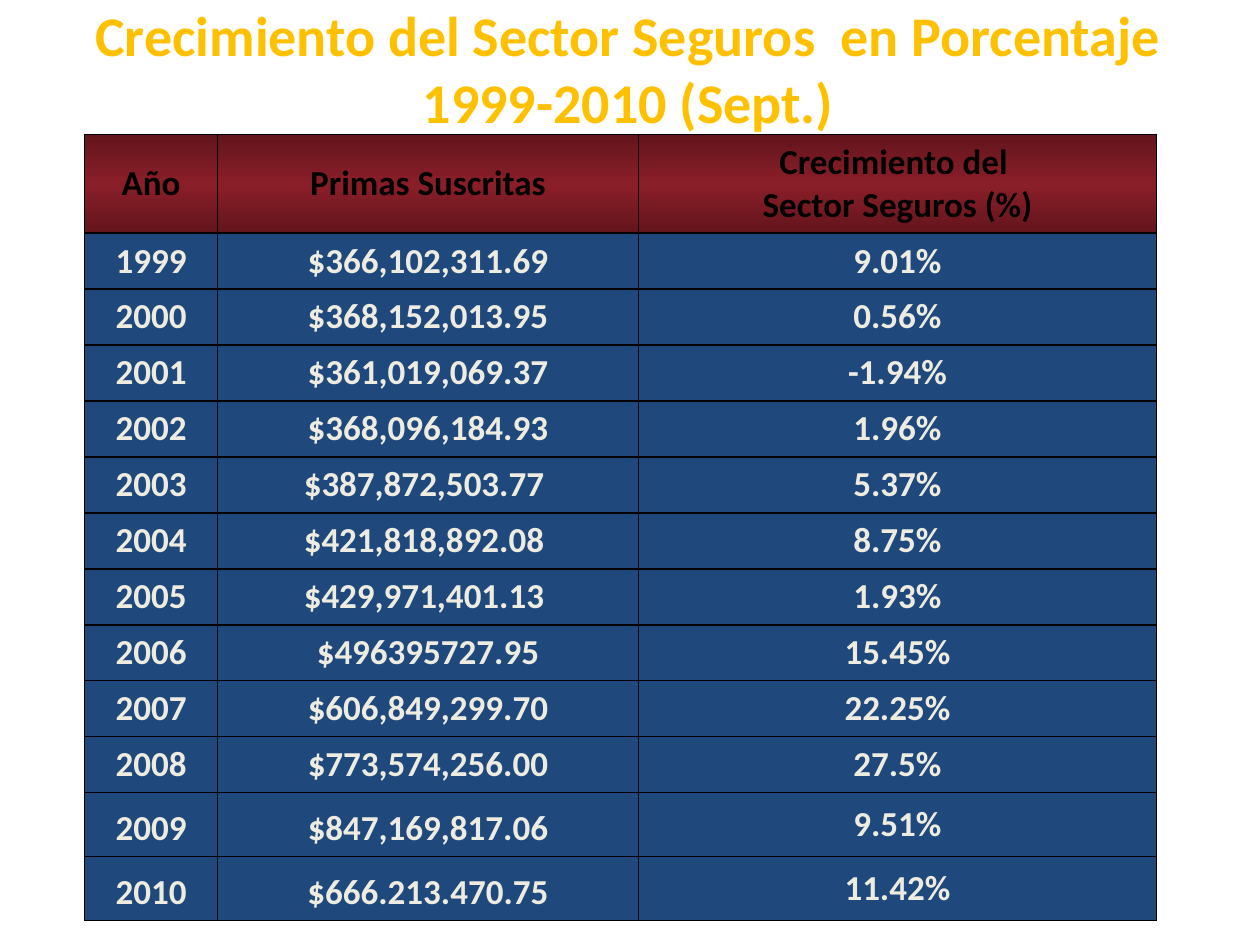
from dataclasses import dataclass

from lxml.etree import SubElement
from pptx import Presentation
from pptx.dml.color import RGBColor
from pptx.enum.text import MSO_ANCHOR as Anchor, MSO_AUTO_SIZE as AutoSize, PP_ALIGN as Align
from pptx.oxml import parse_xml
from pptx.oxml.ns import nsdecls, qn
from pptx.util import Pt


@dataclass(frozen=True)
class Theme:
    font: str = "Calibri"
    title_size: int = 32
    table_size: int = 20
    title: str = "FFC000"
    header_text: str = "000000"
    body_text: str = "EEECE1"
    body_fill: str = "1F497D"
    header_edge: str = "63151D"
    header_middle: str = "8A1E28"
    line: str = "000000"


THEME = Theme()
HANGING = Pt(27)
COLUMN_WIDTHS = (76, 240.5, 296)
HEADER_HEIGHT, ROW_HEIGHT, LAST_ROW_HEIGHT = 56.2, 32, 36.6

TITLE = ("Crecimiento del Sector Seguros  en Porcentaje", "1999-2010 (Sept.)")
HEADERS = ("Año", "Primas Suscritas", "Crecimiento del \nSector Seguros (%)")
GROWTH = (
    ("1999", " $366,102,311.69 ", "9.01%"),
    ("2000", " $368,152,013.95 ", "0.56%"),
    ("2001", " $361,019,069.37 ", "-1.94%"),
    ("2002", " $368,096,184.93 ", "1.96%"),
    ("2003", "$387,872,503.77 ", "5.37%"),
    ("2004", "$421,818,892.08 ", "8.75%"),
    ("2005", "$429,971,401.13 ", "1.93%"),
    ("2006", "$496395727.95", "15.45%"),
    ("2007", "$606,849,299.70", "22.25%"),
    ("2008", "$773,574,256.00", "27.5%"),
    ("2009", "$847,169,817.06", "9.51%"),
    ("2010", "$666.213.470.75", "11.42%"),
)
BOTTOM_YEARS = ("2009", "2010")


def add_run(paragraph, text, size, color):
    run = paragraph.add_run()
    run.text = text
    run.font.name = THEME.font
    run.font.size = Pt(size)
    run.font.bold = True
    run.font.color.rgb = RGBColor.from_string(color)
    return run


def line_xml(tag, width):
    return parse_xml(
        f'<a:{tag} {nsdecls("a")} w="{Pt(width)}"><a:solidFill>'
        f'<a:srgbClr val="{THEME.line}"/></a:solidFill></a:{tag}>')


def add_title(slide):
    title = slide.shapes.title
    title.left, title.top, title.width, title.height = Pt(31), Pt(0), Pt(656), Pt(77)
    frame = title.text_frame
    frame.word_wrap = True
    frame.auto_size = AutoSize.NONE
    frame.vertical_anchor = Anchor.MIDDLE
    paragraph = frame.paragraphs[0]
    paragraph.alignment = Align.CENTER
    for index, text in enumerate(TITLE):
        if index:
            paragraph.add_line_break()
        run = add_run(paragraph, text, THEME.title_size, THEME.title)
        # Hairline text outline
        run.font._element.insert(0, line_xml("ln", 0.15))


def fill_cell(cell, text, color, anchor=Anchor.MIDDLE):
    cell.vertical_anchor = anchor
    frame = cell.text_frame
    for index, line in enumerate(text.split("\n")):
        paragraph = frame.add_paragraph() if index else frame.paragraphs[0]
        paragraph.alignment = Align.CENTER
        properties = paragraph._p.get_or_add_pPr()
        properties.set("marL", str(HANGING))
        properties.set("indent", str(-HANGING))
        add_run(paragraph, line, THEME.table_size, color)
    for side in ("lnL", "lnR", "lnT", "lnB"):
        cell._tc.get_or_add_tcPr().append(line_xml(side, 1))


def add_header_gradient(cell):
    gradient = SubElement(cell._tc.get_or_add_tcPr(), qn("a:gradFill"), rotWithShape="1")
    stops = SubElement(gradient, qn("a:gsLst"))
    colors = (THEME.header_edge, THEME.header_middle, THEME.header_edge)
    for index, color in enumerate(colors):
        stop = SubElement(stops, qn("a:gs"), pos=str(index * 50000))
        SubElement(stop, qn("a:srgbClr"), val=color)
    SubElement(gradient, qn("a:lin"), ang="5400000", scaled="1")


def add_growth_table(slide):
    regular_rows = len(GROWTH) - len(BOTTOM_YEARS)
    heights = ([HEADER_HEIGHT] + [ROW_HEIGHT] * regular_rows
               + [LAST_ROW_HEIGHT] * len(BOTTOM_YEARS))
    table = slide.shapes.add_table(
        len(heights), len(COLUMN_WIDTHS), Pt(48.4), Pt(77),
        Pt(sum(COLUMN_WIDTHS)), Pt(sum(heights))).table
    for column, width in zip(table.columns, COLUMN_WIDTHS):
        column.width = Pt(width)
    for row, height in zip(table.rows, heights):
        row.height = Pt(height)

    # Header row
    for cell, text in zip(table.rows[0].cells, HEADERS):
        fill_cell(cell, text, THEME.header_text)
        add_header_gradient(cell)

    # One row per year
    for row_index, values in enumerate(GROWTH, start=1):
        for column_index, text in enumerate(values):
            cell = table.cell(row_index, column_index)
            at_bottom = values[0] in BOTTOM_YEARS and column_index < 2
            fill_cell(cell, text, THEME.body_text,
                      Anchor.BOTTOM if at_bottom else Anchor.MIDDLE)
            cell.fill.solid()
            cell.fill.fore_color.rgb = RGBColor.from_string(THEME.body_fill)


def main():
    presentation = Presentation()
    presentation.slide_width, presentation.slide_height = Pt(720), Pt(540)
    slide = presentation.slides.add_slide(presentation.slide_layouts[5])
    add_title(slide)
    add_growth_table(slide)
    presentation.save("out.pptx")


if __name__ == "__main__":
    main()
